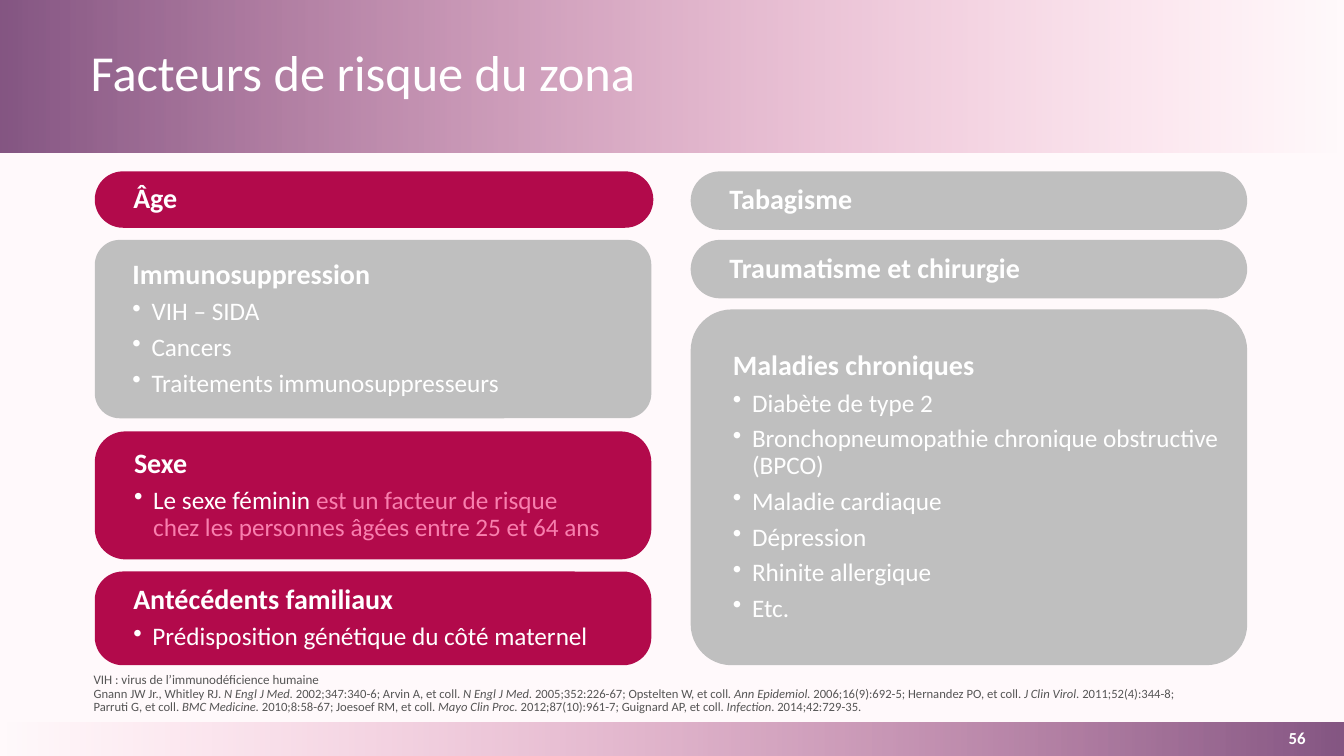
"""Build the slide on risk factors for shingles."""
from lxml import etree
from pptx import Presentation
from pptx.dml.color import RGBColor
from pptx.enum.shapes import MSO_SHAPE
from pptx.enum.text import MSO_ANCHOR, PP_ALIGN
from pptx.oxml.ns import qn
from pptx.util import Inches, Pt

RECTANGLE = MSO_SHAPE.RECTANGLE
ROUNDED = MSO_SHAPE.ROUNDED_RECTANGLE
MIDDLE, BOTTOM = MSO_ANCHOR.MIDDLE, MSO_ANCHOR.BOTTOM
LEFT, CENTER = PP_ALIGN.LEFT, PP_ALIGN.CENTER

FONT = "Calibri"
WHITE, PINK, PURPLE = "FFFFFF", "F87FAE", "855683"
CRIMSON, SILVER, GREY, BLUSH = "B20A4B", "BFBFBF", "555555", "FFF9FB"
LEFT_COLUMN, RIGHT_COLUMN, CARD_WIDTH = 0.94, 6.85, 5.52
LINE_SPACING = 0.9

# left, top, width, height, corner, colour, heading, bullets
CARDS = [
    (LEFT_COLUMN, 5.67, CARD_WIDTH, 0.93, 0.3, CRIMSON, "Antécédents familiaux",
     ["Prédisposition génétique du côté maternel"]),
    (LEFT_COLUMN, 2.38, CARD_WIDTH, 1.77, 0.14, SILVER, "Immunosuppression",
     ["VIH – SIDA", "Cancers", "Traitements immunosuppresseurs"]),
    (LEFT_COLUMN, 4.28, CARD_WIDTH, 1.27, 0.24, CRIMSON, "Sexe",
     ["Le sexe féminin *est un facteur de risque \n"
      "chez les personnes âgées entre 25 et 64 ans"]),
    (RIGHT_COLUMN, 1.7, CARD_WIDTH, 0.58, 0.5, SILVER, "Tabagisme", []),
    (RIGHT_COLUMN, 2.38, CARD_WIDTH, 0.58, 0.5, SILVER, "Traumatisme et chirurgie", []),
    (RIGHT_COLUMN, 3.07, CARD_WIDTH, 3.53, 0.115, SILVER, "Maladies chroniques",
     ["Diabète de type 2", "Bronchopneumopathie chronique obstructive (BPCO)",
      "Maladie cardiaque", "Dépression", "Rhinite allergique", "Etc."]),
    (LEFT_COLUMN, 1.7, 5.54, 0.56, 0.5, CRIMSON, "Âge", []),
]

ABBREVIATION = "VIH : virus de l’immunodéficience humaine"
REFERENCES = (
    "Gnann JW Jr., Whitley RJ. *N Engl J Med. *2002;347:340-6; Arvin A, et coll. "
    "*N Engl J Med. *2005;352:226-67; Opstelten W, et coll*. Ann Epidemiol.* "
    "2006;16(9):692-5; Hernandez PO, et coll. *J Clin Virol. *2011;52(4):344-8; "
    "Parruti G, et coll. *BMC Medicine.* 2010;8:58-67; Joesoef RM, et coll. "
    "*Mayo Clin Proc. *2012;87(10):961-7; Guignard AP, et coll. *Infection*. "
    "2014;42:729-35."
)


def rgb(color):
    """Turn a hex string into a colour."""
    return RGBColor.from_string(color)


def box(left, top, width, height):
    """Convert a position and size to lengths."""
    return [Inches(value) for value in (left, top, width, height)]


def write(paragraph, text, size, color, bold=False, marked_color=None, marked_italic=False):
    """Write text whose parts between asterisks take the marked style."""
    paragraph.line_spacing = LINE_SPACING
    for part_index, part in enumerate(text.split("*")):
        marked = part_index % 2 == 1
        for line_index, line in enumerate(part.split("\n")):
            if line_index:
                paragraph.add_line_break()
            run = paragraph.add_run()
            run.text = line
            run.font.name, run.font.size = FONT, Pt(size)
            run.font.bold = bold
            run.font.italic = marked and marked_italic
            run.font.color.rgb = rgb(marked_color if marked and marked_color else color)


def add_bullet(paragraph):
    """Give a paragraph a hanging round bullet."""
    properties = paragraph._p.get_or_add_pPr()
    properties.set("marL", str(Inches(0.19)))
    properties.set("indent", str(-Inches(0.19)))
    etree.SubElement(properties, qn("a:buChar")).set("char", "•")


def add_shape(slide, kind, left, top, width, height):
    """Add a preset shape without line or shadow."""
    shape = slide.shapes.add_shape(kind, *box(left, top, width, height))
    shape.shadow.inherit = False
    shape.line.fill.background()
    return shape


def add_band(slide, top, height, angle):
    """Add a full-width band that fades from purple to clear pink."""
    band = add_shape(slide, RECTANGLE, 0, top, 13.33, height)
    band.fill.gradient()
    band.fill.gradient_angle = angle
    for stop, color, position in zip(band.fill.gradient_stops, (PURPLE, PINK), (0, 1)):
        stop.color.rgb = rgb(color)
        stop.position = position
    clear_color = band._element.spPr.findall(".//" + qn("a:srgbClr"))[-1]
    etree.SubElement(clear_color, qn("a:alpha")).set("val", "0")


def add_card(slide, left, top, width, height, corner, color, heading, bullets):
    """Add a rounded card with a bold heading and bullets."""
    card = add_shape(slide, ROUNDED, left, top, width, height)
    card.adjustments[0] = corner
    card.fill.solid()
    card.fill.fore_color.rgb = rgb(color)
    frame = card.text_frame
    frame.word_wrap = True
    frame.vertical_anchor = MIDDLE
    frame.margin_left, frame.margin_right = Inches(0.3), Inches(0.07)
    frame.margin_top = frame.margin_bottom = 0
    write(frame.paragraphs[0], heading, 20, WHITE, bold=True)
    for bullet in bullets:
        paragraph = frame.add_paragraph()
        write(paragraph, bullet, 18, WHITE, marked_color=PINK)
    for index, paragraph in enumerate(frame.paragraphs):
        paragraph.alignment = LEFT
        paragraph.space_after = Pt(6)
        if index:
            add_bullet(paragraph)


def add_text_frame(slide, left, top, width, height, anchor):
    """Add a wrapping text box and return its frame."""
    frame = slide.shapes.add_textbox(*box(left, top, width, height)).text_frame
    frame.word_wrap = True
    frame.vertical_anchor = anchor
    return frame


def add_references(slide):
    """Add the abbreviation and the references."""
    frame = add_text_frame(slide, 0.83, 6.47, 11.26, 0.67, BOTTOM)
    write(frame.paragraphs[0], ABBREVIATION, 9.3, GREY)
    write(frame.add_paragraph(), REFERENCES, 9, GREY, marked_italic=True)


def add_page_number(slide, number):
    """Add the page number in the lower band."""
    frame = add_text_frame(slide, 12.4, 7.17, 0.93, 0.33, MIDDLE)
    frame.margin_left = frame.margin_right = frame.margin_top = frame.margin_bottom = 0
    frame.paragraphs[0].alignment = CENTER
    write(frame.paragraphs[0], number, 12, WHITE, bold=True)


def place_title(slide, text):
    """Place the title in front of the upper band."""
    title = slide.shapes.title
    title.left, title.top, title.width, title.height = box(0.8, 0.18, 11.47, 1.14)
    title._element.getparent().append(title._element)
    title.text_frame.vertical_anchor = MIDDLE
    paragraph = title.text_frame.paragraphs[0]
    paragraph.alignment = LEFT
    write(paragraph, text, 36, WHITE)


def main():
    """Build and save the slide."""
    presentation = Presentation()
    presentation.slide_width, presentation.slide_height = Inches(13.33), Inches(7.5)
    slide = presentation.slides.add_slide(presentation.slide_layouts[5])
    slide.background.fill.solid()
    slide.background.fill.fore_color.rgb = rgb(BLUSH)
    add_band(slide, 7.17, 0.33, 180)
    add_band(slide, 0, 1.51, 0)
    add_references(slide)
    place_title(slide, "Facteurs de risque du zona")
    add_page_number(slide, "56")
    for card in CARDS:
        add_card(slide, *card)
    presentation.save("out.pptx")


if __name__ == "__main__":
    main()
